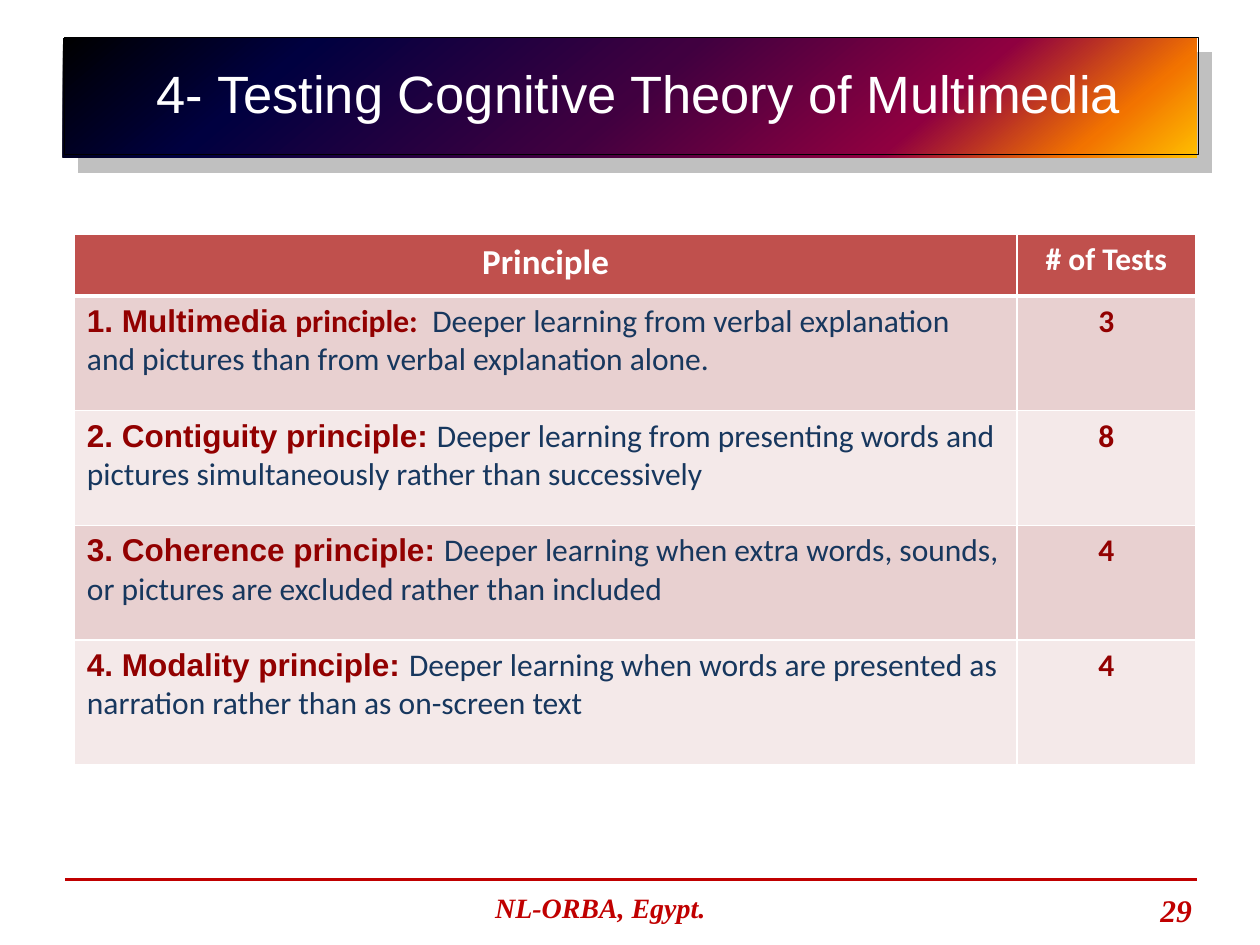
from lxml.etree import SubElement
from pptx import Presentation
from pptx.dml.color import RGBColor
from pptx.enum.shapes import MSO_CONNECTOR as CONNECTOR, MSO_SHAPE as SHAPE
from pptx.enum.text import MSO_ANCHOR as ANCHOR, PP_ALIGN as ALIGN
from pptx.oxml.ns import qn
from pptx.util import Inches, Pt

COLORS = {
    "white": "FFFFFF", "black": "000000", "shadow": "C0C0C0", "accent": "C00000",
    "header": "C0504D", "dark_band": "E8D0D0", "light_band": "F4E9E9",
    "term": "920000", "body": "17375E",
}
BANNER_STOPS = [(0, "000000"), (20, "000040"), (50, "400040"),
                (75, "8F0040"), (90, "F27300"), (100, "FFBF00")]
PRINCIPLES = [
    ([("1. Multimedia ", "Arial"), ("principle:  ", "Calibri")],
     "Deeper learning from verbal explanation and pictures than from verbal explanation alone.", "3"),
    ([("2. Contiguity principle: ", "Arial")],
     "Deeper learning from presenting words and pictures simultaneously rather than successively", "8"),
    ([("3. Coherence principle: ", "Arial")],
     "Deeper learning when extra words, sounds, or pictures are excluded rather than included", "4"),
    ([("4. Modality principle: ", "Arial")],
     "Deeper learning when words are presented as narration rather than as on-screen text", "4"),
]


def add_text(frame, text, size=18, font="Calibri", color="body", bold=False,
             italic=False, align=ALIGN.LEFT, spacing=None):
    """Append a run to the frame's first paragraph and return the paragraph."""
    paragraph = frame.paragraphs[0]
    paragraph.alignment = align
    if spacing:
        paragraph.line_spacing = spacing
    run = paragraph.add_run()
    run.text = text
    run.font.size, run.font.name = Pt(size), font
    run.font.bold, run.font.italic = bold, italic
    run.font.color.rgb = RGBColor.from_string(COLORS[color])
    return paragraph


def style_cell(cell, fill, bottom=1):
    """Give a cell white borders, the bottom one in its own width, and a fill."""
    properties = cell._tc.get_or_add_tcPr()
    for side, width in (("L", 1), ("R", 1), ("T", 1), ("B", bottom)):
        border = SubElement(properties, qn(f"a:ln{side}"), w=str(Pt(width)))
        SubElement(SubElement(border, qn("a:solidFill")), qn("a:srgbClr"), val=COLORS["white"])
    cell.fill.solid()
    cell.fill.fore_color.rgb = RGBColor.from_string(COLORS[fill])


prs = Presentation()
prs.slide_width, prs.slide_height = Inches(10), Inches(7.5)
slide = prs.slides.add_slide(prs.slide_layouts[6])
shapes = slide.shapes

# Banner with a six-stop gradient and a hard shadow
banner = shapes.add_shape(SHAPE.RECTANGLE, Inches(0.5), Inches(0.3), Inches(9), Inches(0.95))
banner.fill.gradient()
banner.fill.gradient_angle = 310
stops = banner._element.spPr.find(".//" + qn("a:gsLst"))
for stop in list(stops):
    stops.remove(stop)
for percent, color in BANNER_STOPS:
    stop = SubElement(stops, qn("a:gs"), pos=str(percent * 1000))
    SubElement(stop, qn("a:srgbClr"), val=color)
banner.line.fill.background()
banner.shadow.inherit = False
shadow = SubElement(banner._element.spPr.find(qn("a:effectLst")), qn("a:outerShdw"),
                    dist=str(Pt(12.2)), dir=str(45 * 60000), algn="ctr", rotWithShape="0")
SubElement(shadow, qn("a:srgbClr"), val=COLORS["shadow"])

footer_rule = shapes.add_connector(CONNECTOR.STRAIGHT, Inches(0.52), Inches(6.98),
                                   Inches(9.5), Inches(6.98))
footer_rule.line.color.rgb = RGBColor.from_string(COLORS["accent"])
footer_rule.line.width = Pt(2.25)
SubElement(footer_rule._element.spPr, qn("a:effectLst"))

# Title
title = shapes.add_shape(SHAPE.RECTANGLE, Inches(0.51), Inches(0.3), Inches(9), Inches(0.93))
title.fill.background()
title.line.color.rgb = RGBColor.from_string(COLORS["black"])
title.line.width = Pt(0.5)
title.shadow.inherit = False
title_frame = title.text_frame
title_frame.word_wrap = False
title_frame.vertical_anchor = ANCHOR.MIDDLE
title_frame.margin_left = title_frame.margin_right = 0
title_frame.margin_top = title_frame.margin_bottom = 0
heading = add_text(title_frame, "4- Testing Cognitive Theory of Multimedia", size=30,
                   font="Arial", color="white", align=ALIGN.CENTER, spacing=0.93)
heading.space_after = Pt(14.2)
heading._p.get_or_add_pPr().set("marL", str(Inches(0.12)))

# Footer
for text, left, width, size, align in (
    ("NL-ORBA, Egypt.", 2.95, 3.63, 16, ALIGN.CENTER),
    ("29", 7.13, 2.33, 18, ALIGN.RIGHT),
):
    footer = shapes.add_textbox(Inches(left), Inches(7.09), Inches(width), Inches(0.37)).text_frame
    footer.word_wrap = True
    footer.margin_left = footer.margin_right = footer.margin_top = footer.margin_bottom = 0
    add_text(footer, text, size=size, font="Times New Roman", color="accent",
             bold=True, italic=True, align=align, spacing=0.95)

# Principles and their test counts
table = shapes.add_table(len(PRINCIPLES) + 1, 2, Inches(0.59), Inches(1.86),
                         Inches(8.9), Inches(4.21)).table
for column, width in zip(table.columns, (7.48, 1.42)):
    column.width = Inches(width)
for row, height in zip(table.rows, (0.49, 0.91, 0.91, 0.91, 0.99)):
    row.height = Inches(height)

for column, (text, size) in enumerate((("Principle", 20), ("# of Tests", 18))):
    cell = table.cell(0, column)
    style_cell(cell, "header", bottom=3)
    add_text(cell.text_frame, text, size=size, color="white", bold=True, align=ALIGN.CENTER)

for row, (terms, finding, tests) in enumerate(PRINCIPLES, start=1):
    principle_cell, tests_cell = table.cell(row, 0), table.cell(row, 1)
    for cell in (principle_cell, tests_cell):
        style_cell(cell, "dark_band" if row % 2 else "light_band")
    for term, font in terms:
        add_text(principle_cell.text_frame, term, font=font, color="term", bold=True)
    add_text(principle_cell.text_frame, finding)
    add_text(tests_cell.text_frame, tests, color="term", bold=True, align=ALIGN.CENTER)

prs.save("out.pptx")
